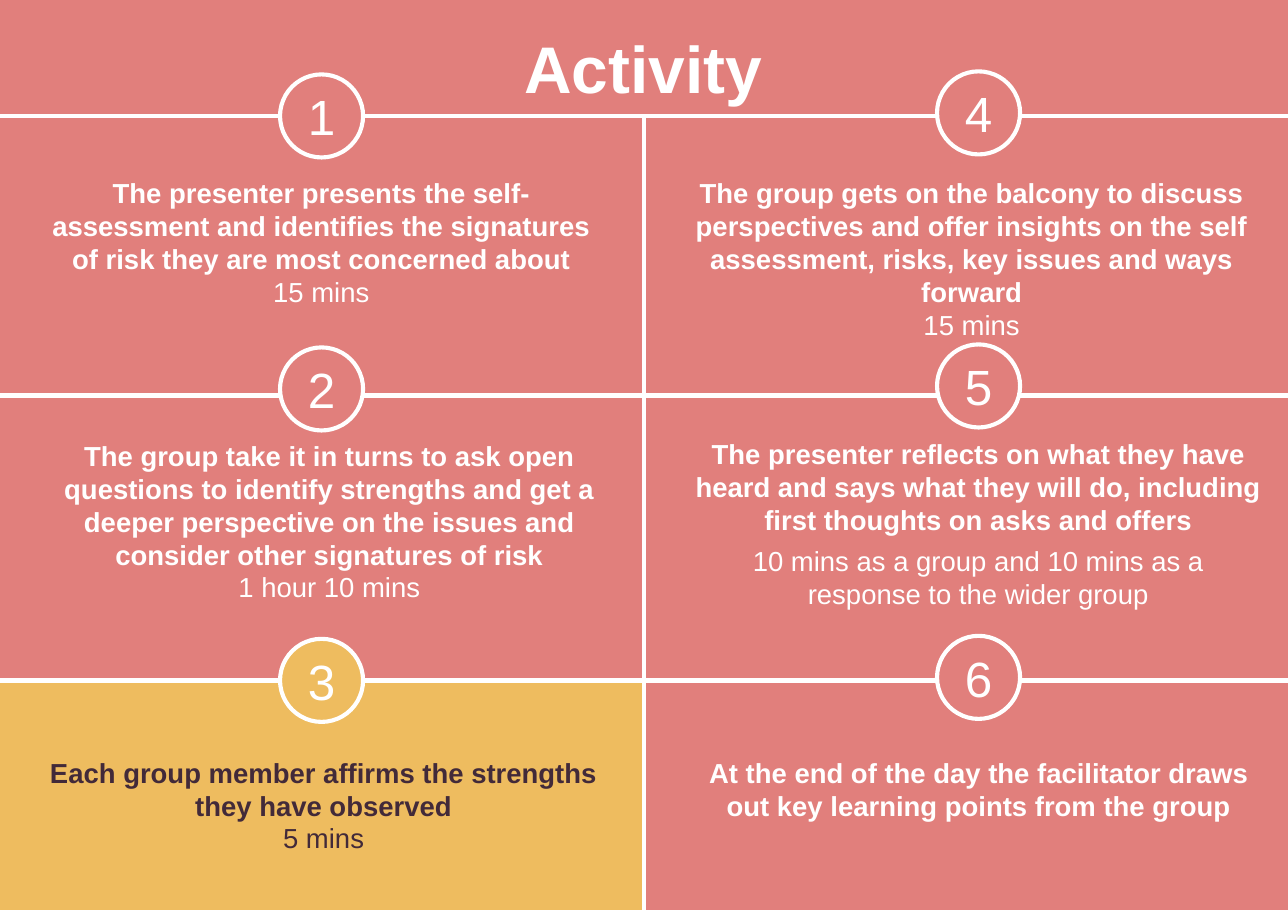
from pptx import Presentation
from pptx.dml.color import RGBColor
from pptx.enum.shapes import MSO_CONNECTOR, MSO_SHAPE
from pptx.enum.text import MSO_ANCHOR, MSO_AUTO_SIZE, PP_ALIGN
from pptx.oxml.ns import qn
from pptx.util import Pt

CENTER = PP_ALIGN.CENTER
TOP, MIDDLE = MSO_ANCHOR.TOP, MSO_ANCHOR.MIDDLE
NO_AUTOFIT = MSO_AUTO_SIZE.NONE
RECTANGLE, OVAL = MSO_SHAPE.RECTANGLE, MSO_SHAPE.OVAL
STRAIGHT = MSO_CONNECTOR.STRAIGHT

WIDTH, HEIGHT = 938.25, 662.63
CORAL, YELLOW, WHITE, PLUM = "E17F7C", "EEBC5F", "FFFFFF", "422A39"
FONT = "Arial"
DIVIDER_X = 469.2
ROW_LINES = (84.4, 288, 495.5)
BADGE_SIZE = 60.5
BADGE_LEFTS = (204, 682.6)
BADGE_TOPS = (54.2, 253, 465.2)
RIGHT_BADGE_LIFT = 2.2
STEP_HEIGHT = 56

# Left, top, width, space before, text: \v breaks a line, \n starts a paragraph
STEPS = (
    (19.6, 121, 429, 0, "The presenter presents the self-assessment and identifies "
     "the signatures of risk they are most concerned about\n15 mins"),
    (19.7, 312.2, 440.5, 6, "The group take it in turns to ask open questions to identify "
     "strengths and get a deeper perspective on the issues and consider other "
     "signatures of risk\v1 hour 10 mins"),
    (27.2, 543, 417, 6, "Each group member affirms the strengths they have observed\v5 mins"),
    (478.8, 121, 458, 6, "The group gets on the balcony to discuss perspectives and offer "
     "insights on the self assessment, risks, key issues and ways forward\v15 mins"),
    (498.2, 311.2, 429, 6, "The presenter reflects on what they have heard and says what they "
     "will do, including first thoughts on asks and offers\n"
     "10 mins as a group and 10 mins as a response to the wider group"),
    (504.5, 543, 417, 6, "At the end of the day the facilitator draws out key learning "
     "points from the group"),
)


def color(hex_value):
    return RGBColor.from_string(hex_value)


def paint(fill, hex_value):
    fill.solid()
    fill.fore_color.rgb = color(hex_value)


def format_run(run, size, hex_value, bold=False):
    run.font.name = FONT
    run.font.size = Pt(size)
    run.font.bold = bold
    run.font.color.rgb = color(hex_value)


def set_margins(frame, horizontal, vertical):
    frame.margin_left = frame.margin_right = Pt(horizontal)
    frame.margin_top = frame.margin_bottom = Pt(vertical)


def add_title(slide, text):
    title = slide.shapes.title
    title.left, title.top, title.width, title.height = Pt(324.7), Pt(15), Pt(287.5), Pt(56)
    frame = title.text_frame
    frame.text = text
    frame.word_wrap = True
    frame.auto_size = NO_AUTOFIT
    frame.vertical_anchor = TOP
    set_margins(frame, 9.4, 4.3)
    heading = frame.paragraphs[0]
    heading.alignment = CENTER
    heading.line_spacing = Pt(58.5)
    format_run(heading.runs[0], 48, WHITE, bold=True)


def add_panel(slide, left, top, width, height, fill):
    panel = slide.shapes.add_shape(RECTANGLE, Pt(left), Pt(top), Pt(width), Pt(height))
    panel.shadow.inherit = False
    paint(panel.fill, fill)
    panel.line.fill.background()


def add_divider(slide, x1, y1, x2, y2):
    divider = slide.shapes.add_connector(STRAIGHT, Pt(x1), Pt(y1), Pt(x2), Pt(y2))
    divider.line.color.rgb = color(WHITE)
    divider.line.width = Pt(3)
    properties = divider.element.spPr
    properties.append(properties.makeelement(qn("a:effectLst"), {}))


def add_badge(slide, number, left, top, fill):
    badge = slide.shapes.add_shape(OVAL, Pt(left), Pt(top), Pt(BADGE_SIZE), Pt(BADGE_SIZE))
    badge.shadow.inherit = False
    paint(badge.fill, fill)
    badge.line.color.rgb = color(WHITE)
    badge.line.width = Pt(3)
    frame = badge.text_frame
    frame.text = str(number)
    frame.vertical_anchor = MIDDLE
    set_margins(frame, 7.2, 7.2)
    frame.paragraphs[0].alignment = CENTER
    format_run(frame.paragraphs[0].runs[0], 36, WHITE)


def add_step(slide, left, top, width, space_before, text, text_color):
    step = slide.shapes.add_textbox(Pt(left), Pt(top), Pt(width), Pt(STEP_HEIGHT))
    frame = step.text_frame
    frame.text = text
    frame.word_wrap = True
    set_margins(frame, 7.2, 7.2)
    for paragraph in frame.paragraphs:
        paragraph.alignment = CENTER
        paragraph.space_before = Pt(space_before)
        paragraph.line_spacing = Pt(24)
    # The instruction is bold, the timing after it is not
    runs = [run for paragraph in frame.paragraphs for run in paragraph.runs]
    for index, run in enumerate(runs):
        format_run(run, 20, text_color, bold=index == 0)


def main():
    presentation = Presentation()
    presentation.slide_width, presentation.slide_height = Pt(WIDTH), Pt(HEIGHT)
    slide = presentation.slides.add_slide(presentation.slide_layouts[5])
    paint(slide.background.fill, CORAL)
    add_title(slide, "Activity")

    # Highlighted cell and grid lines
    add_panel(slide, 0, ROW_LINES[2], DIVIDER_X, HEIGHT - ROW_LINES[2], YELLOW)
    add_divider(slide, DIVIDER_X, ROW_LINES[0], DIVIDER_X, HEIGHT)
    for line_y in ROW_LINES:
        add_divider(slide, 0, line_y, WIDTH, line_y)

    # Numbered steps, down the left column and then the right
    for index, step in enumerate(STEPS):
        column, row = divmod(index, len(ROW_LINES))
        highlighted = index == 2
        add_badge(slide, index + 1, BADGE_LEFTS[column],
                  BADGE_TOPS[row] - column * RIGHT_BADGE_LIFT,
                  YELLOW if highlighted else CORAL)
        add_step(slide, *step, PLUM if highlighted else WHITE)

    presentation.save("out.pptx")


if __name__ == "__main__":
    main()
